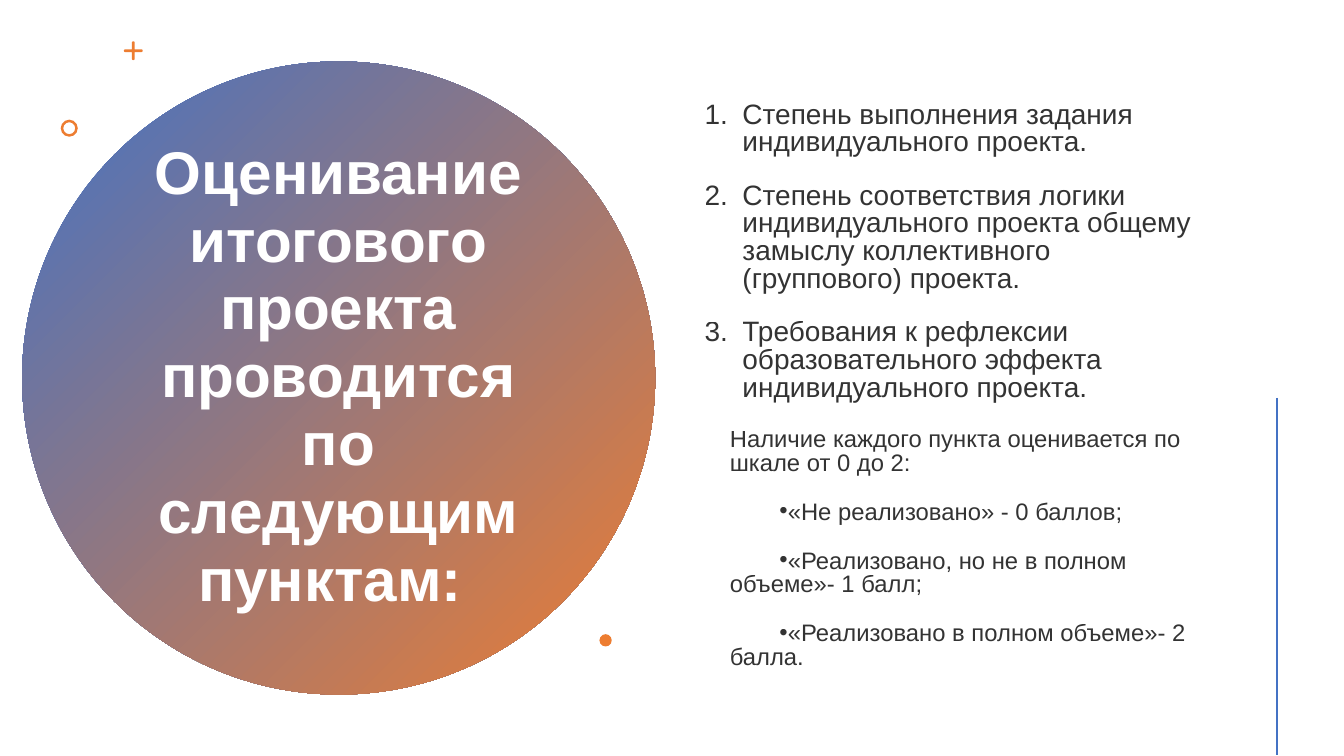
import math

import lxml.etree
import pptx
import pptx.dml.color
import pptx.enum.shapes
import pptx.enum.text
import pptx.oxml.ns
import pptx.util

Pt = pptx.util.Pt
RGBColor = pptx.dml.color.RGBColor
SHAPE = pptx.enum.shapes.MSO_SHAPE
ALIGN = pptx.enum.text.PP_ALIGN
qn = pptx.oxml.ns.qn

BLUE = RGBColor(0x44, 0x72, 0xC4)
ORANGE = RGBColor(0xED, 0x7D, 0x31)
WHITE = RGBColor(0xFF, 0xFF, 0xFF)
BLACK = RGBColor(0x00, 0x00, 0x00)
FONT = "Arial"

HEADING = "Оценивание итогового проекта проводится по следующим пунктам: "
CRITERIA = [
    "Степень выполнения задания индивидуального проекта.",
    "Степень соответствия логики индивидуального проекта общему замыслу "
    "коллективного (группового) проекта.",
    "Требования к рефлексии образовательного эффекта индивидуального проекта.",
]
SCALE_INTRO = "Наличие каждого пункта оценивается по шкале от 0 до 2:"
SCORES = [
    "«Не реализовано» - 0 баллов;",
    "«Реализовано, но не в полном объеме»- 1 балл;",
    "«Реализовано в полном объеме»- 2 балла.",
]

# size, left margin, first-line indent, marker element, marker attributes
NUMBERED = (20, 27, -27, "a:buAutoNum", {"type": "arabicPeriod"})
PLAIN = (17, 18, 0, "a:buNone", {})
BULLETED = (17, 18, 35.5, "a:buChar", {"char": "•"})


def place(placeholder, left, top, width, height):
    placeholder.left, placeholder.top = Pt(left), Pt(top)
    placeholder.width, placeholder.height = Pt(width), Pt(height)
    frame = placeholder.text_frame
    frame.word_wrap = True
    frame.auto_size = pptx.enum.text.MSO_AUTO_SIZE.NONE
    frame.vertical_anchor = pptx.enum.text.MSO_ANCHOR.MIDDLE
    return frame


def format_runs(paragraph, size, color, bold=False):
    for run in paragraph.runs:
        run.font.name = FONT
        run.font.size = Pt(size)
        run.font.bold = bold
        run.font.color.rgb = color


def fill_title(title):
    frame = place(title, 98, 101.5, 287.3, 336.2)
    frame.text = HEADING
    heading = frame.paragraphs[0]
    heading.alignment = ALIGN.CENTER
    heading.line_spacing = 0.94
    format_runs(heading, 43, WHITE, bold=True)


def format_item(paragraph, style):
    size, margin, indent, marker, attributes = style
    paragraph.alignment = ALIGN.LEFT
    paragraph.line_spacing = 0.83
    paragraph.space_before = Pt(10)
    paragraph.space_after = Pt(8)
    format_runs(paragraph, size, BLACK)
    for color in paragraph._p.iter(qn("a:srgbClr")):
        lxml.etree.SubElement(color, qn("a:alpha"), val="80000")
    properties = paragraph._p.get_or_add_pPr()
    properties.set("marL", str(Pt(margin)))
    properties.set("indent", str(Pt(indent)))
    lxml.etree.SubElement(properties, qn(marker), attributes)


def fill_body(body):
    frame = place(body, 496.1, 41, 375.8, 459.4)
    frame.margin_top = Pt(13.6)
    items = [(text, NUMBERED) for text in CRITERIA]
    items.append((SCALE_INTRO, PLAIN))
    items += [(text, BULLETED) for text in SCORES]
    frame.text = "\n".join(text for text, _ in items)
    for paragraph, (_, style) in zip(frame.paragraphs, items):
        format_item(paragraph, style)


def add_round(slide, preset, left, top, diameter):
    shape = slide.shapes.add_shape(preset, Pt(left), Pt(top), Pt(diameter), Pt(diameter))
    shape.shadow.inherit = False
    shape.fill.solid()
    shape.fill.fore_color.rgb = ORANGE
    shape.line.fill.background()
    return shape


def add_circle_behind(slide, title):
    circle = add_round(slide, SHAPE.OVAL, 15.8, 43.9, 452.2)
    circle.fill.gradient()
    circle.fill.gradient_angle = 315
    for stop, color in zip(circle.fill.gradient_stops, (BLUE, ORANGE)):
        stop.color.rgb = color
    title.element.addprevious(circle.element)


def add_plus(slide, center_x, center_y, reach, half_width):
    """Draw a cross whose four arms have rounded ends."""
    points = []
    for quarter in range(4):
        turn = math.radians(90 * quarter)
        arm = [
            (reach - half_width + half_width * math.cos(math.radians(angle)),
             half_width * math.sin(math.radians(angle)))
            for angle in range(-90, 91, 30)
        ]
        arm.append((half_width, half_width))
        for x, y in arm:
            points.append((
                Pt(center_x + x * math.cos(turn) - y * math.sin(turn)),
                Pt(center_y + x * math.sin(turn) + y * math.cos(turn)),
            ))
    builder = slide.shapes.build_freeform(*points[0])
    builder.add_line_segments(points[1:], close=True)
    plus = builder.convert_to_shape()
    plus.shadow.inherit = False
    plus.fill.solid()
    plus.fill.fore_color.rgb = ORANGE
    plus.line.fill.background()


def add_side_line(slide):
    line = slide.shapes.add_connector(
        pptx.enum.shapes.MSO_CONNECTOR.STRAIGHT, Pt(912.2), Pt(284.2), Pt(912.2), Pt(539.5))
    line.line.color.rgb = BLUE
    line.line.width = Pt(2)
    lxml.etree.SubElement(line.element.spPr, qn("a:effectLst"))


def main():
    deck = pptx.Presentation()
    deck.slide_width, deck.slide_height = Pt(960), Pt(540)
    slide = deck.slides.add_slide(deck.slide_layouts[1])
    title, body = slide.placeholders

    fill_title(title)
    add_circle_behind(slide, title)
    fill_body(body)
    add_plus(slide, 95.2, 36.2, reach=6.7, half_width=1)
    ring = add_round(slide, SHAPE.DONUT, 43.4, 85.5, 12.2)
    ring.adjustments[0] = 0.15
    add_round(slide, SHAPE.OVAL, 428.2, 453, 8.8)
    add_side_line(slide)
    deck.save("out.pptx")


if __name__ == "__main__":
    main()
